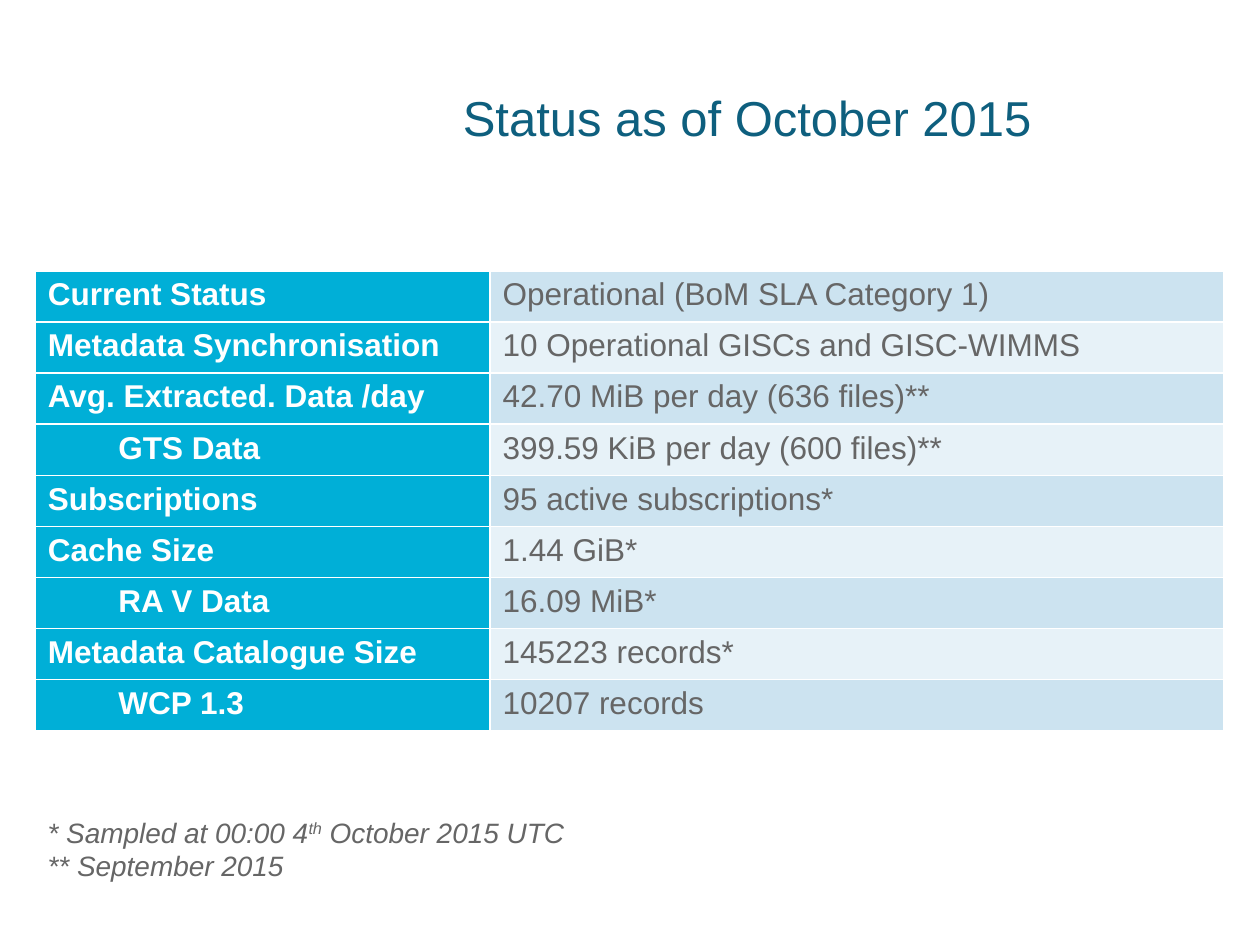
from lxml.etree import SubElement
from pptx import Presentation
from pptx.dml.color import RGBColor
from pptx.enum.text import MSO_ANCHOR, PP_ALIGN
from pptx.oxml.ns import qn
from pptx.util import Inches, Pt

TEAL = RGBColor(0x0E, 0x5F, 0x7E)
CYAN = RGBColor(0x00, 0xAF, 0xD7)
GREY = RGBColor(0x66, 0x66, 0x66)
WHITE = RGBColor(0xFF, 0xFF, 0xFF)
BANDS = (RGBColor(0xCC, 0xE3, 0xF0), RGBColor(0xE7, 0xF2, 0xF8))

LEFT = 0.28
COLS = (3.61, 5.82)
HIGH = 3.65
PAD, INDENT = 0.1, 0.56

# Label, value, level of the label
ROWS = (
    ("Current Status", "Operational (BoM SLA Category 1)", 0),
    ("Metadata Synchronisation", "10 Operational GISCs and GISC-WIMMS", 0),
    ("Avg. Extracted. Data /day", "42.70 MiB per day (636 files)**", 0),
    ("GTS Data", "399.59 KiB per day (600 files)**", 1),
    ("Subscriptions", "95 active subscriptions*", 0),
    ("Cache Size", "1.44 GiB*", 0),
    ("RA V Data", "16.09 MiB*", 1),
    ("Metadata Catalogue Size", "145223 records*", 0),
    ("WCP 1.3", "10207 records", 1),
)


def style(para, size, color, bold=False, italic=False):
    font = para.font
    font.name, font.size = "Arial", Pt(size)
    font.bold, font.italic = bold, italic
    font.color.rgb = color


def add_box(slide, *place):
    return slide.shapes.add_textbox(*map(Inches, place)).text_frame


def add_title(slide, text):
    frame = add_box(slide, 2.36, 0.3, 7.14, 1.25)
    frame.word_wrap = True
    frame.vertical_anchor = MSO_ANCHOR.MIDDLE
    para = frame.paragraphs[0]
    para.text = text
    para.alignment = PP_ALIGN.CENTER
    style(para, 28, TEAL)


def add_edges(cell):
    props = cell._tc.get_or_add_tcPr()
    for side in ("lnL", "lnR", "lnT", "lnB"):
        line = SubElement(props, qn(f"a:{side}"), w=str(Pt(1)))
        fill = SubElement(line, qn("a:solidFill"))
        SubElement(fill, qn("a:srgbClr"), val=str(WHITE))


def fill_cell(cell, text, back, color, bold=False, level=0):
    add_edges(cell)
    cell.fill.solid()
    cell.fill.fore_color.rgb = back
    cell.margin_left = Inches(PAD + level * INDENT)
    cell.text = text
    style(cell.text_frame.paragraphs[0], 18, color, bold)


def add_grid(slide):
    place = map(Inches, (LEFT, 2.15, sum(COLS), HIGH))
    table = slide.shapes.add_table(len(ROWS), len(COLS), *place).table
    table.first_row = table.horz_banding = False
    for col, width in zip(table.columns, COLS):
        col.width = Inches(width)
    for i, (label, value, level) in enumerate(ROWS):
        table.rows[i].height = Inches(HIGH / len(ROWS))
        fill_cell(table.cell(i, 0), label, CYAN, WHITE, True, level)
        fill_cell(table.cell(i, 1), value, BANDS[i % 2], GREY)


def add_notes(slide):
    frame = add_box(slide, LEFT, 6.42, 4.37, 0.64)
    frame.word_wrap = False
    first, last = frame.paragraphs[0], frame.add_paragraph()
    for text in ("* Sampled at 00:00 4", "th", " October 2015 UTC"):
        run = first.add_run()
        run.text = text
        if text == "th":
            run.font._element.set("baseline", "30000")  # superscript
    last.text = "** September 2015"
    for para in (first, last):
        style(para, 16, GREY, italic=True)


def main():
    deck = Presentation()
    deck.slide_width, deck.slide_height = Inches(10), Inches(7.5)
    slide = deck.slides.add_slide(deck.slide_layouts[6])
    add_title(slide, "Status as of October 2015")
    add_grid(slide)
    add_notes(slide)
    deck.save("out.pptx")


if __name__ == "__main__":
    main()
